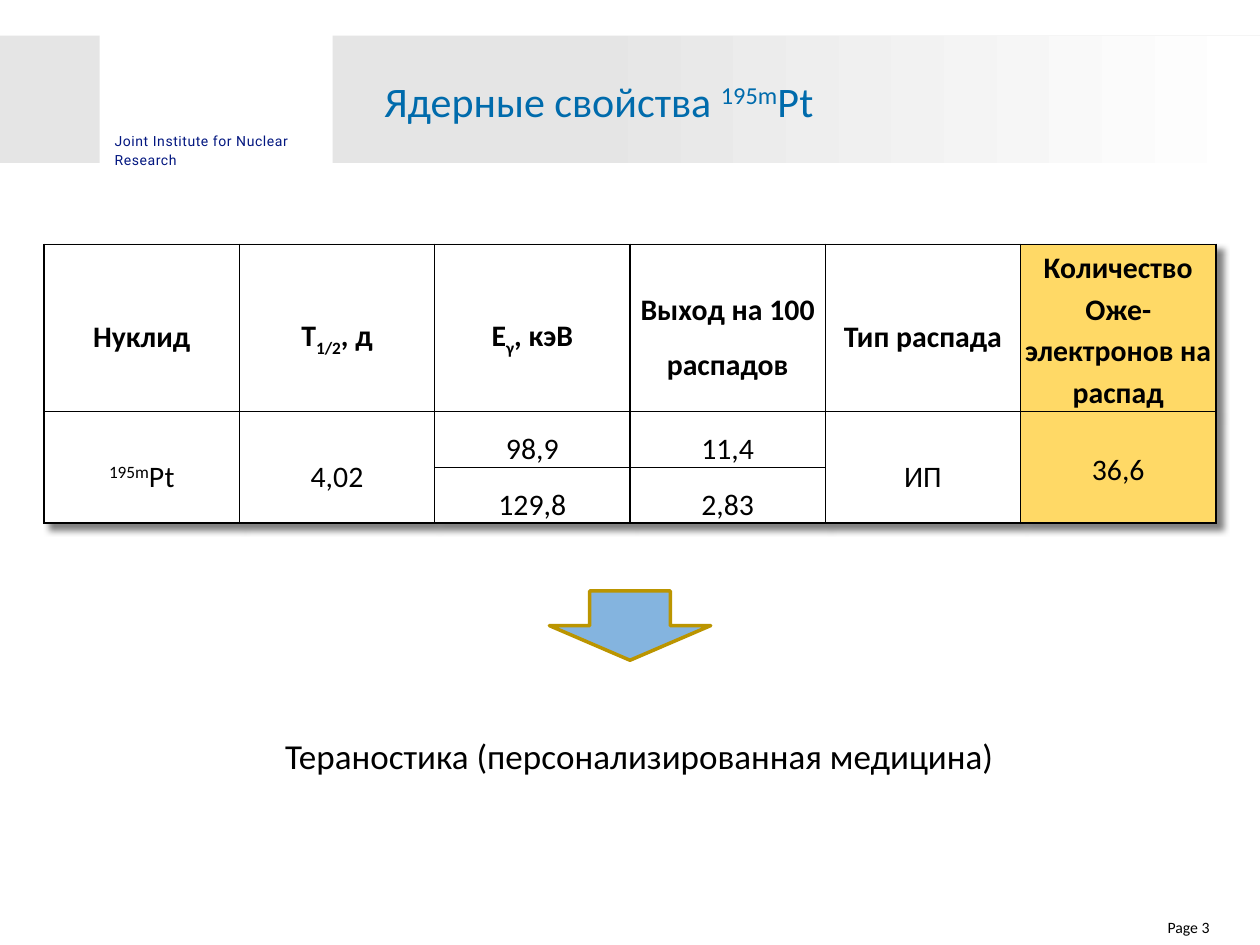
from dataclasses import dataclass
from typing import NamedTuple

from lxml import etree
from pptx import Presentation
from pptx.dml.color import RGBColor
from pptx.enum import shapes, text
from pptx.oxml import parse_xml
from pptx.oxml.ns import nsdecls, qn
from pptx.util import Pt


@dataclass(frozen=True)
class Theme:
    font: str = "Calibri"
    logo_font: str = "Roboto"
    black: str = "000000"
    white: str = "FFFFFF"
    band: str = "E5E5E5"
    title: str = "006BAC"
    logo: str = "031780"
    highlight: str = "FFD966"
    arrow: str = "5B9BD5"
    arrow_line: str = "BB9500"
    title_size: float = 24
    body_size: float = 20
    table_size: float = 17
    page_size: float = 9
    logo_size: float = 8


THEME = Theme()


class Area(NamedTuple):
    left: float
    top: float
    width: float
    height: float

    def lengths(self) -> list:
        return [Pt(value) for value in self]


class Span(NamedTuple):
    words: str
    baseline: int = 0


class Style(NamedTuple):
    size: float
    color: str = THEME.black
    name: str = THEME.font
    bold: bool = False
    spacing: float = 0


class Entry(NamedTuple):
    row: int
    column: int
    spans: list[Span]
    rows: int = 1


TITLE = [Span("Ядерные свойства "), Span("195m", 30), Span("Pt")]
HIGHLIGHT_COLUMN = 5
COLUMN_WIDTH = 111.6
ROW_HEIGHTS = [61.2, 31, 31]
ENTRIES = [
    Entry(0, 0, [Span("Нуклид")]),
    Entry(0, 1, [Span("T"), Span("1/2", -25), Span(", д")]),
    Entry(0, 2, [Span("E"), Span("γ", -25), Span(", кэВ")]),
    Entry(0, 3, [Span("Выход на 100 распадов")]),
    Entry(0, 4, [Span("Тип распада")]),
    Entry(0, 5, [Span("Количество Оже-электронов на распад")]),
    Entry(1, 0, [Span("195m", 30), Span("Pt")], 2),
    Entry(1, 1, [Span("4,02")], 2),
    Entry(1, 2, [Span("98,9")]),
    Entry(1, 3, [Span("11,4")]),
    Entry(1, 4, [Span("ИП")], 2),
    Entry(1, 5, [Span("36,6")], 2),
    Entry(2, 2, [Span("129,8")]),
    Entry(2, 3, [Span("2,83")]),
]


def rgb(color: str) -> RGBColor:
    return RGBColor.from_string(color)


def apply(target, **values) -> None:
    for name, value in values.items():
        setattr(target, name, value)


def write(para, spans: list[Span], style: Style, **layout) -> None:
    apply(para, **layout)
    for words, baseline in spans:
        span = para.add_run()
        span.text = words
        apply(span.font, name=style.name, size=Pt(style.size), bold=style.bold)
        span.font.color.rgb = rgb(style.color)
        properties = span._r.get_or_add_rPr()
        if baseline:
            properties.set("baseline", str(baseline * 1000))
        if style.spacing:
            properties.set("spc", str(round(style.spacing * 100)))


def set_frame(frame, inset: bool = False, wrap: bool = True,
              anchor=text.MSO_ANCHOR.TOP) -> None:
    apply(frame, word_wrap=wrap, vertical_anchor=anchor,
          auto_size=text.MSO_AUTO_SIZE.NONE)
    if not inset:
        apply(frame, margin_left=0, margin_top=0, margin_right=0, margin_bottom=0)


def add_text(page, area: Area, lines: list[str], style: Style,
             wrap: bool = True, **layout) -> None:
    frame = page.shapes.add_textbox(*area.lengths()).text_frame
    set_frame(frame, wrap=wrap)
    for number, line in enumerate(lines):
        para = frame.add_paragraph() if number else frame.paragraphs[0]
        write(para, [Span(line)], style, **layout)


def place(page, holder, area: Area):
    """Move a placeholder to its area, in front of what is drawn so far."""
    names = ("left", "top", "width", "height")
    apply(holder, **dict(zip(names, area.lengths())))
    page.shapes._spTree.append(holder._element)
    return holder.text_frame


def add_shape(page, kind, area: Area, color: str):
    shape = page.shapes.add_shape(kind, *area.lengths())
    shape.shadow.inherit = False
    shape.fill.solid()
    shape.fill.fore_color.rgb = rgb(color)
    shape.line.fill.background()
    return shape


def add_bands(page) -> None:
    top, height, right = 20.4, 72.7, 720
    rect = shapes.MSO_SHAPE.RECTANGLE
    for left, end in ((0, 57), (190, right)):
        add_shape(page, rect, Area(left, top, end - left, height), THEME.band)
    fade = add_shape(page, rect, Area(191.5, top, right - 191.5, height), THEME.band)
    fade.fill.gradient()
    fade.fill.gradient_angle = 180
    colors = ((0, THEME.white), (0.74, THEME.band))
    for stop, (position, color) in zip(fade.fill.gradient_stops, colors):
        stop.position = position
        stop.color.rgb = rgb(color)


def format_cell(cell, highlighted: bool) -> None:
    properties = cell._tc.get_or_add_tcPr()
    for side in "LRTB":
        properties.append(parse_xml(
            f'<a:ln{side} {nsdecls("a")} w="12700"><a:solidFill>'
            f'<a:srgbClr val="{THEME.black}"/></a:solidFill></a:ln{side}>'))
    cell.fill.solid()
    cell.fill.fore_color.rgb = rgb(THEME.highlight if highlighted else THEME.white)
    side, top = (0, 0) if highlighted else (Pt(5), Pt(0.7))
    apply(cell, vertical_anchor=text.MSO_ANCHOR.MIDDLE, margin_left=side,
          margin_right=side, margin_top=top, margin_bottom=0)


def add_nuclide_table(page) -> None:
    columns = HIGHLIGHT_COLUMN + 1
    area = Area(25.2, 139.7, COLUMN_WIDTH * columns, sum(ROW_HEIGHTS))
    table = page.shapes.add_table(len(ROW_HEIGHTS), columns, *area.lengths()).table
    apply(table, first_row=False, horz_banding=False)
    table._tbl.tblPr.insert(0, parse_xml(
        f'<a:effectLst {nsdecls("a")}><a:outerShdw blurRad="50800" dist="50800" '
        f'dir="2700000" algn="tl" rotWithShape="0"><a:srgbClr val="{THEME.black}">'
        '<a:alpha val="50000"/></a:srgbClr></a:outerShdw></a:effectLst>'))
    for column in table.columns:
        column.width = Pt(COLUMN_WIDTH)
    for row, height in zip(table.rows, ROW_HEIGHTS):
        row.height = Pt(height)
        for number, cell in enumerate(row.cells):
            format_cell(cell, number == HIGHLIGHT_COLUMN)
    for entry in ENTRIES:
        cell = table.cell(entry.row, entry.column)
        if entry.rows > 1:
            cell.merge(table.cell(entry.row + entry.rows - 1, entry.column))
        write(cell.text_frame.paragraphs[0], entry.spans,
              Style(THEME.table_size, bold=entry.row == 0),
              alignment=text.PP_ALIGN.CENTER, space_after=Pt(10),
              line_spacing=1.15 if entry.column == HIGHLIGHT_COLUMN else 1.5)


def add_arrow(page) -> None:
    arrow = add_shape(page, shapes.MSO_SHAPE.DOWN_ARROW,
                      Area(313.9, 337.7, 92.2, 39.6), THEME.arrow)
    color = arrow._element.spPr.find(qn("a:solidFill"))[0]
    etree.SubElement(color, qn("a:alpha"), val="75000")
    arrow.line.color.rgb = rgb(THEME.arrow_line)
    arrow.line.width = Pt(2)


def main() -> None:
    deck = Presentation()
    apply(deck, slide_width=Pt(720), slide_height=Pt(540))
    page = deck.slides.add_slide(deck.slide_layouts[1])
    add_bands(page)
    add_text(page, Area(65.5, 74.9, 110, 72), ["Joint Institute for Nuclear", "Research"],
             Style(THEME.logo_size, THEME.logo, THEME.logo_font, spacing=0.3),
             wrap=False, line_spacing=1.1)

    body = place(page, page.placeholders[1], Area(127.4, 417.6, 476, 39.6))
    set_frame(body)
    para = body.paragraphs[0]
    properties = para._p.get_or_add_pPr()
    apply_indent = {"marL": "0", "indent": "0"}
    for name, value in apply_indent.items():
        properties.set(name, value)
    etree.SubElement(properties, qn("a:buNone"))
    write(para, [Span("Тераностика (персонализированная медицина)")],
          Style(THEME.body_size), alignment=text.PP_ALIGN.CENTER,
          line_spacing=1.1, space_before=Pt(0))

    title = place(page, page.shapes.title, Area(212.4, 37.4, 479.5, 40.3))
    set_frame(title, inset=True, anchor=text.MSO_ANCHOR.MIDDLE)
    write(title.paragraphs[0], TITLE, Style(THEME.title_size, THEME.title),
          alignment=text.PP_ALIGN.LEFT)

    add_text(page, Area(645.8, 524.2, 45.4, 15.8), ["Page 3"],
             Style(THEME.page_size), alignment=text.PP_ALIGN.RIGHT)
    add_nuclide_table(page)
    add_arrow(page)
    deck.save("out.pptx")


if __name__ == "__main__":
    main()
